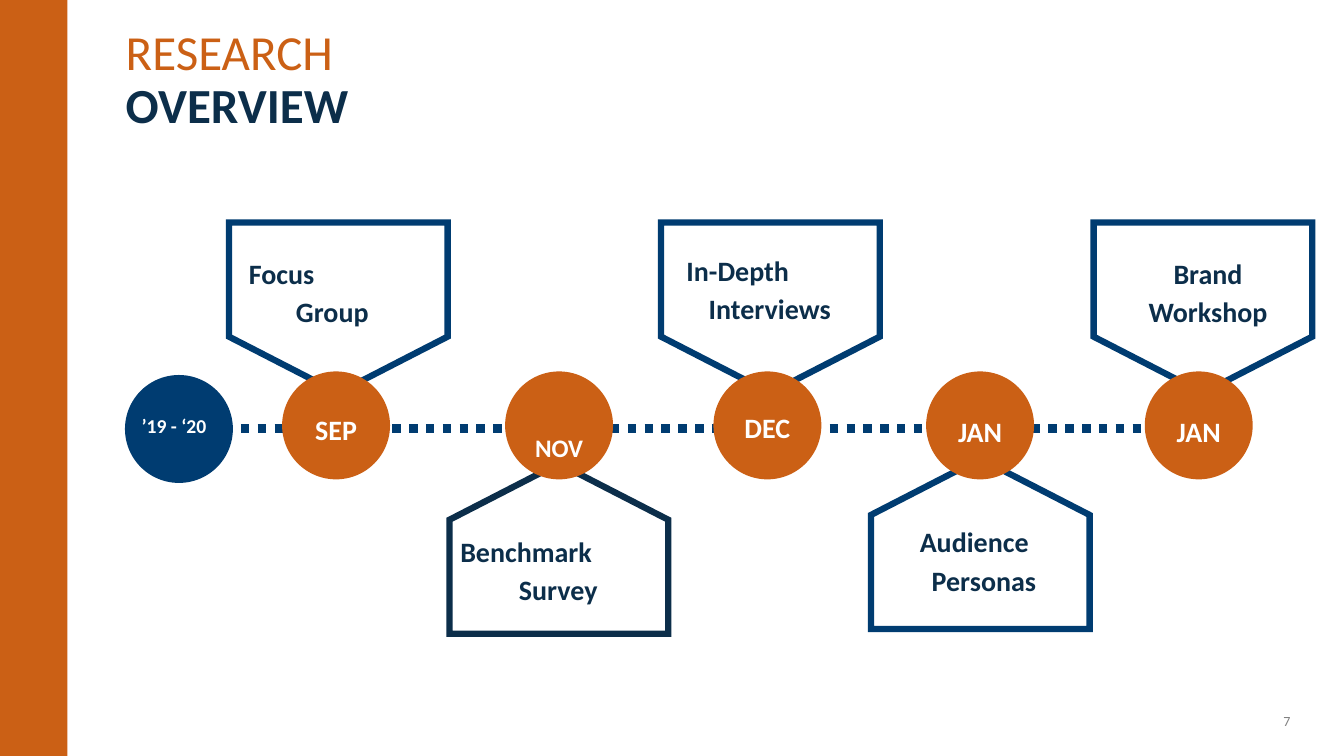
from lxml.etree import SubElement
from pptx import Presentation
from pptx.dml.color import RGBColor
from pptx.enum.dml import MSO_LINE
from pptx.enum.shapes import MSO_CONNECTOR, MSO_SHAPE
from pptx.enum.text import MSO_ANCHOR as Anchor, PP_ALIGN as Align
from pptx.oxml.ns import qn
from pptx.util import Cm, Pt

ORANGE = RGBColor(0xCB, 0x60, 0x15)
BLUE = RGBColor(0x00, 0x3C, 0x71)
NAVY = RGBColor(0x0C, 0x2E, 0x4A)
GREY = RGBColor(0x80, 0x80, 0x80)
WHITE = RGBColor(0xFF, 0xFF, 0xFF)
FONT = "Calibri"

CIRCLE_SIZE = 2.72
CIRCLE_TOP = 9.36
MONTH_WIDTH = 5.41
TIMELINE_Y = 10.8
POINTS_DOWN, POINTS_UP = 90, 270

# left, top, direction of the point, outline colour
CALLOUTS = [
    (6.38, 5.0, POINTS_DOWN, BLUE),
    (17.27, 5.0, POINTS_DOWN, BLUE),
    (28.17, 5.0, POINTS_DOWN, BLUE),
    (22.56, 10.95, POINTS_UP, BLUE),
    (11.94, 11.07, POINTS_UP, NAVY),
]
# left, top, width, lines with their indents (None is centred)
LABELS = [
    (5.38, 6.22, 5.99, [("Focus", 0.64), ("Group", 1.83)]),
    (10.59, 13.23, 6.99, [("Benchmark", 0.76), ("Survey", 2.24)]),
    (15.82, 6.15, 7.19, [("In-Depth", 1.23), ("Interviews", 1.79)]),
    (21.77, 12.98, 6.05, [("Audience", 1.16), ("Personas", 1.46)]),
    (27.74, 6.22, 5.41, [("Brand", None), ("Workshop", None)]),
]
# circle left, text top, month, text size
MONTHS = [
    (7.11, 10.16, "SEP", 20),
    (12.73, 10.67, "NOV", 18),
    (17.98, 10.11, "DEC", 20),
    (23.34, 10.19, "JAN", 20),
    (28.85, 10.19, "JAN", 20),
]


def add_filled_shape(slide, preset, left, top, width, height, color):
    shape = slide.shapes.add_shape(preset, Cm(left), Cm(top), Cm(width), Cm(height))
    shape.shadow.inherit = False
    shape.fill.solid()
    shape.fill.fore_color.rgb = color
    shape.line.fill.background()


def add_circle(slide, left, top, color):
    add_filled_shape(slide, MSO_SHAPE.OVAL, left, top, CIRCLE_SIZE, CIRCLE_SIZE, color)


def add_callout(slide, left, top, rotation, color):
    """Add an outlined pentagon with sharp corners, turned up or down."""
    shape = slide.shapes.add_shape(
        MSO_SHAPE.PENTAGON, Cm(left), Cm(top), Cm(4.29), Cm(5.51))
    shape.adjustments[0] = 0.33
    shape.rotation = rotation
    shape.shadow.inherit = False
    shape.fill.background()
    shape.line.color.rgb = color
    shape.line.width = Pt(4.5)
    outline = shape._element.spPr.find(qn("a:ln"))
    SubElement(outline, qn("a:miter"), lim="800000")


def add_timeline(slide):
    connector = slide.shapes.add_connector(
        MSO_CONNECTOR.STRAIGHT, Cm(6.07), Cm(TIMELINE_Y), Cm(31.14), Cm(TIMELINE_Y))
    connector.line.color.rgb = BLUE
    connector.line.width = Pt(6)
    connector.line.dash_style = MSO_LINE.ROUND_DOT
    SubElement(connector._element.spPr, qn("a:effectLst"))


def add_text_frame(slide, left, top, width, height, anchor=Anchor.TOP, wrap=True):
    box = slide.shapes.add_textbox(Cm(left), Cm(top), Cm(width), Cm(height))
    frame = box.text_frame
    frame.word_wrap = wrap
    frame.vertical_anchor = anchor
    return frame


def write_line(frame, text, size, color, bold=False, align=Align.LEFT,
               spacing=1.0, indent=None):
    """Fill the first paragraph if it is still empty, else add another."""
    first = frame.paragraphs[0]
    paragraph = frame.add_paragraph() if first.runs else first
    paragraph.alignment = align
    paragraph.line_spacing = spacing
    if indent is not None:
        paragraph._p.get_or_add_pPr().set("marL", str(Cm(indent)))
    run = paragraph.add_run()
    run.text = text
    run.font.name = FONT
    run.font.size = Pt(size)
    run.font.bold = bold
    run.font.color.rgb = color


def add_title(slide):
    frame = add_text_frame(slide, 2.92, 1.3, 9.73, 1.5, Anchor.MIDDLE)
    write_line(frame, "RESEARCH", 35, ORANGE, spacing=0.9)
    write_line(frame, "OVERVIEW", 35, NAVY, bold=True, spacing=0.9)


def add_label(slide, left, top, width, lines):
    frame = add_text_frame(slide, left, top, width, 2.13)
    for text, indent in lines:
        align = Align.CENTER if indent is None else Align.LEFT
        write_line(frame, text, 20, NAVY, True, align, 1.14, indent)


def add_month(slide, circle_left, top, month, size):
    left = circle_left + (CIRCLE_SIZE - MONTH_WIDTH) / 2
    frame = add_text_frame(slide, left, top, MONTH_WIDTH, 1.17)
    write_line(frame, month, size, WHITE, True, Align.CENTER, 1.14)


def add_years(slide):
    frame = add_text_frame(slide, 3.18, 10.31, 2.41, 0.86, wrap=False)
    write_line(frame, "’19 - ‘20", 14, WHITE, True, Align.CENTER)


def add_slide_number(slide):
    frame = add_text_frame(slide, 31.42, 17.78, 1.35, 0.79, Anchor.MIDDLE)
    write_line(frame, "7", 10, GREY, align=Align.RIGHT)


def main():
    presentation = Presentation()
    presentation.slide_width = Cm(33.87)
    presentation.slide_height = Cm(19.05)
    slide = presentation.slides.add_slide(presentation.slide_layouts[6])

    add_slide_number(slide)
    add_title(slide)
    add_filled_shape(slide, MSO_SHAPE.RECTANGLE, 0, 0, 1.7, 19.05, ORANGE)
    for callout in CALLOUTS:
        add_callout(slide, *callout)
    add_circle(slide, 3.15, 9.45, BLUE)
    add_timeline(slide)
    for circle_left, *_ in MONTHS:
        add_circle(slide, circle_left, CIRCLE_TOP, ORANGE)
    for label in LABELS:
        add_label(slide, *label)
    for month in MONTHS:
        add_month(slide, *month)
    add_years(slide)

    presentation.save("out.pptx")


if __name__ == "__main__":
    main()
